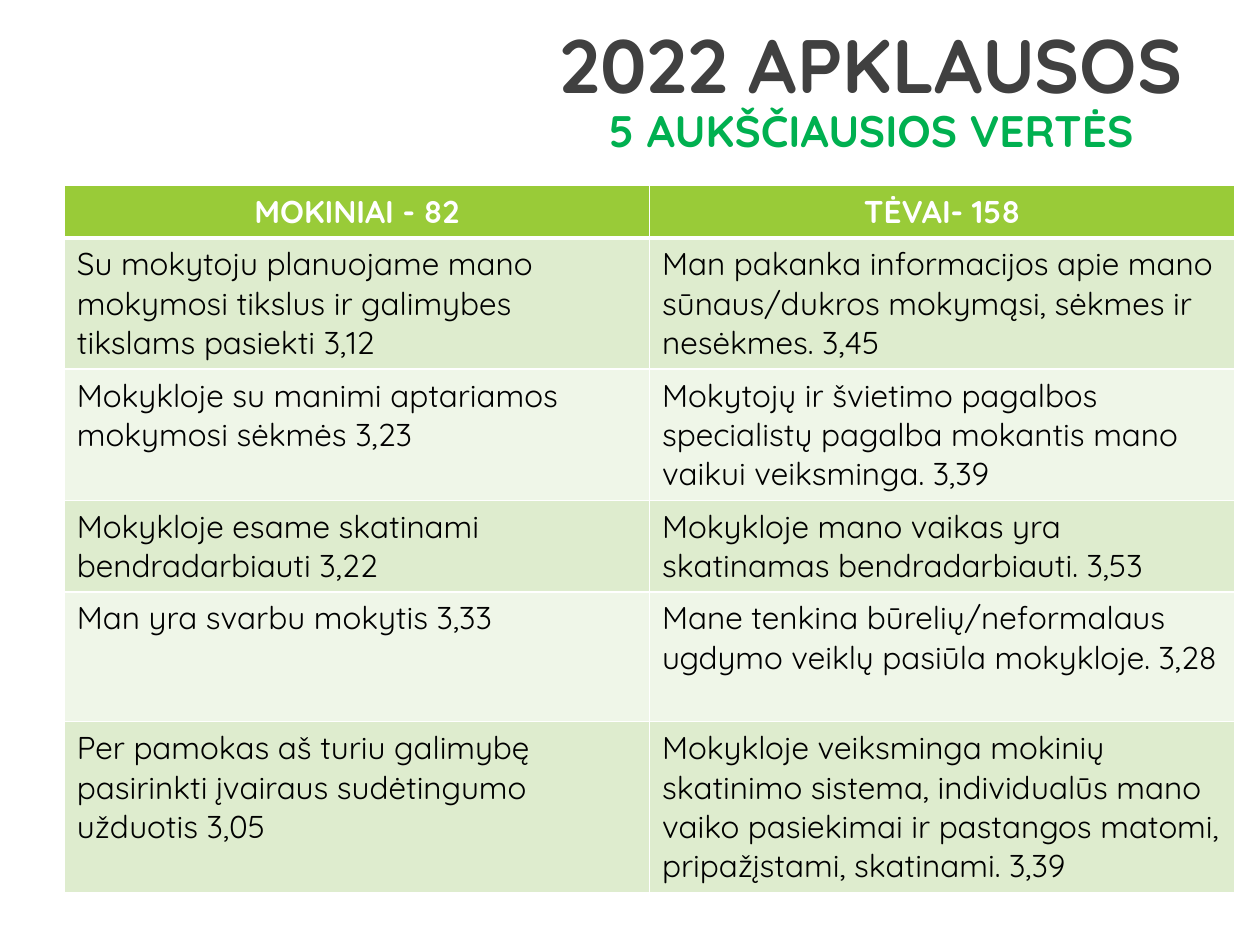
from lxml import etree
from pptx import Presentation
from pptx.dml.color import RGBColor
from pptx.enum import text
from pptx.oxml import ns
from pptx.util import Inches, Pt

FONT = "Quicksand"
HEADINGS = ("MOKINIAI - 82", "TĖVAI- 158")
ANSWERS = (
    ("Su mokytoju planuojame mano mokymosi tikslus ir galimybes tikslams pasiekti 3,12",
     "Man pakanka informacijos apie mano sūnaus/dukros mokymąsi, sėkmes ir nesėkmes. 3,45"),
    ("Mokykloje su manimi aptariamos mokymosi sėkmės 3,23",
     "Mokytojų ir švietimo pagalbos specialistų pagalba mokantis mano vaikui veiksminga. 3,39"),
    ("Mokykloje esame skatinami bendradarbiauti 3,22",
     "Mokykloje mano vaikas yra skatinamas bendradarbiauti. 3,53"),
    ("Man yra svarbu mokytis 3,33",
     "Mane tenkina būrelių/neformalaus ugdymo veiklų pasiūla mokykloje. 3,28"),
    ("Per pamokas aš turiu galimybę pasirinkti įvairaus sudėtingumo užduotis 3,05",
     "Mokykloje veiksminga mokinių skatinimo sistema, individualūs mano vaiko pasiekimai "
     "ir pastangos matomi, pripažįstami, skatinami. 3,39"),
)
ROW_HEIGHTS = (0.42, 1.03, 1.03, 0.72, 1.03, 1.34)


def color(value):
    return RGBColor.from_string(value)


def add_span(para, wording, size, ink, bold=False):
    span = para.add_run()
    span.text = wording
    span.font.name = FONT
    span.font.size = Pt(size)
    span.font.bold = bold
    span.font.color.rgb = color(ink)


def set_borders(cell, bottom_width):
    props = cell._tc.get_or_add_tcPr()
    widths = {"lnL": 1, "lnR": 1, "lnT": 1, "lnB": bottom_width}
    for side, width in widths.items():
        line = etree.SubElement(props, ns.qn(f"a:{side}"), w=str(Pt(width)))
        fill = etree.SubElement(line, ns.qn("a:solidFill"))
        etree.SubElement(fill, ns.qn("a:srgbClr"), val="FFFFFF")


def place_title(page, left, top, width, height):
    box = page.shapes.title
    box.left, box.top = Inches(left), Inches(top)
    box.width, box.height = Inches(width), Inches(height)
    frame = box.text_frame
    frame.word_wrap = True
    frame.auto_size = text.MSO_AUTO_SIZE.NONE
    frame.vertical_anchor = text.MSO_ANCHOR.TOP
    frame.margin_top = 0
    para = frame.paragraphs[0]
    para.alignment = text.PP_ALIGN.CENTER
    para.line_spacing = 0.9
    add_span(para, "2022 APKLAUSOS", 43.2, "404040", True)
    para.add_line_break()
    add_span(para, "5 AUKŠČIAUSIOS VERTĖS", 25.2, "00B050", True)


def place_table(page, left, top, width, height):
    rows = (HEADINGS, *ANSWERS)
    table = page.shapes.add_table(len(rows), len(HEADINGS), Inches(left), Inches(top),
                                  Inches(width), Inches(height)).table
    for row, row_height in zip(table.rows, ROW_HEIGHTS):
        row.height = Inches(row_height)
    for i, wordings in enumerate(rows):
        heading = i == 0
        for j, wording in enumerate(wordings):
            cell = table.cell(i, j)
            set_borders(cell, 3 if heading else 1)
            # Green heading row, then two alternating tints
            shade = "99CB38" if heading else ("DEECCE" if i % 2 else "EFF6E8")
            cell.fill.solid()
            cell.fill.fore_color.rgb = color(shade)
            para = cell.text_frame.paragraphs[0]
            para.alignment = text.PP_ALIGN.CENTER if heading else text.PP_ALIGN.LEFT
            add_span(para, wording, 18, "FFFFFF" if heading else "000000", heading)


def main():
    deck = Presentation()
    deck.slide_width, deck.slide_height = Inches(10), Inches(7.5)
    page = deck.slides.add_slide(deck.slide_layouts[5])
    place_title(page, 3.43, 0.22, 6.97, 1.41)
    place_table(page, 0.51, 1.47, 9.29, sum(ROW_HEIGHTS))
    deck.save("out.pptx")


if __name__ == "__main__":
    main()
